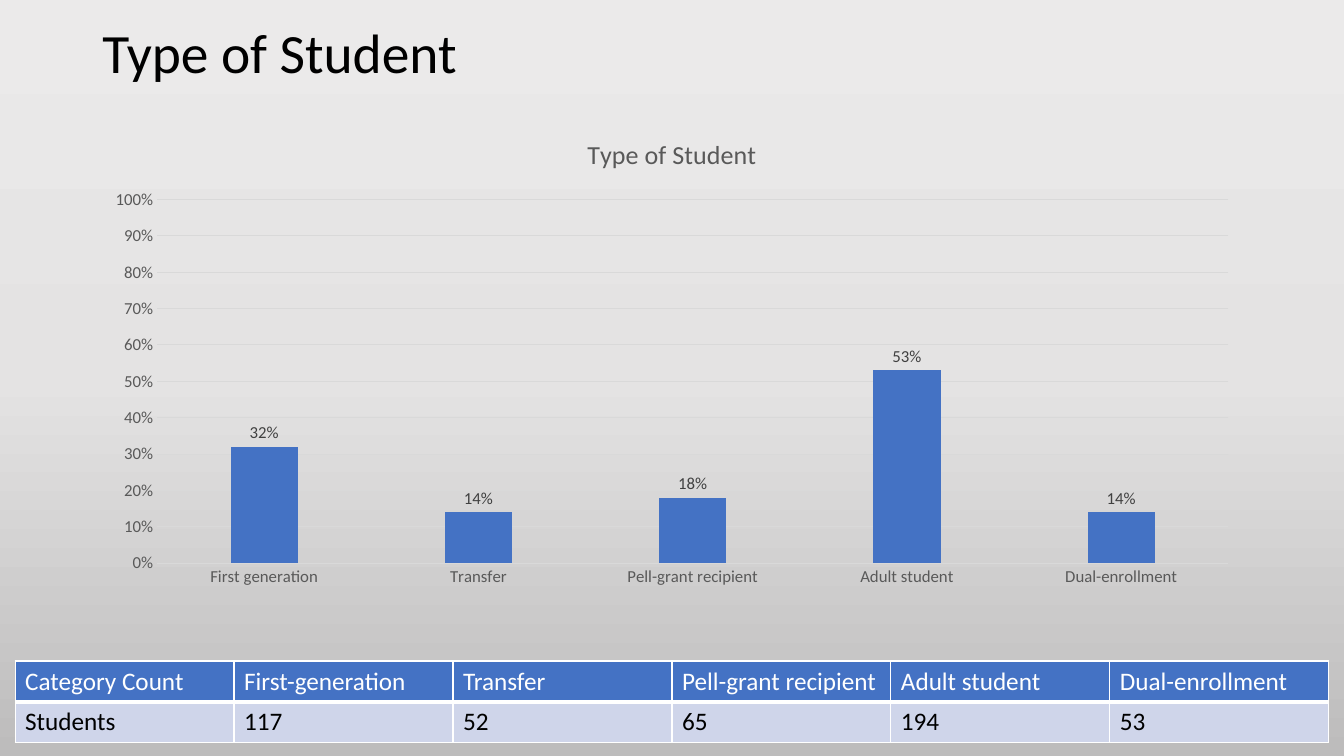
from lxml import etree
from pptx import Presentation
from pptx.chart.data import CategoryChartData
from pptx.dml.color import RGBColor
from pptx.enum.chart import XL_CHART_TYPE, XL_LABEL_POSITION, XL_TICK_MARK
from pptx.enum.text import MSO_ANCHOR
from pptx.oxml.ns import qn
from pptx.util import Pt

COLUMNS = XL_CHART_TYPE.COLUMN_CLUSTERED
OUTSIDE_END = XL_LABEL_POSITION.OUTSIDE_END
NO_TICK = XL_TICK_MARK.NONE
MIDDLE = MSO_ANCHOR.MIDDLE

FONT = "Calibri"
BLACK = RGBColor(0x00, 0x00, 0x00)
WHITE = RGBColor(0xFF, 0xFF, 0xFF)
BLUE = RGBColor(0x44, 0x72, 0xC4)
PALE_BLUE = RGBColor(0xCF, 0xD5, 0xEA)
LABEL_GRAY = RGBColor(0x40, 0x40, 0x40)
AXIS_GRAY = RGBColor(0x59, 0x59, 0x59)
GRID_GRAY = RGBColor(0xD9, 0xD9, 0xD9)
BACKGROUND_STOPS = [
    (0, RGBColor(0xEB, 0xEA, 0xEA)),
    (50, RGBColor(0xE4, 0xE3, 0xE3)),
    (100, RGBColor(0xBD, 0xBC, 0xBC)),
]

TITLE = "Type of Student"
SHARES = {
    "First generation": 0.32,
    "Transfer": 0.14,
    "Pell-grant recipient": 0.18,
    "Adult student": 0.53,
    "Dual-enrollment": 0.14,
}
COUNTS = [
    ["Category Count", "First-generation", "Transfer",
     "Pell-grant recipient", "Adult student", "Dual-enrollment"],
    ["Students", "117", "52", "65", "194", "53"],
]


def write(frame, text, size, color, spacing=None):
    paragraph = frame.paragraphs[0]
    paragraph.line_spacing = spacing
    run = paragraph.add_run()
    run.text = text
    run.font.size = Pt(size)
    run.font.name = FONT
    run.font.color.rgb = color
    run.font.bold = False


def style_font(font, size, color):
    font.size = Pt(size)
    font.name = FONT
    font.color.rgb = color


prs = Presentation()
prs.slide_width, prs.slide_height = Pt(960), Pt(540)
slide = prs.slides.add_slide(prs.slide_layouts[6])

# Background gradient, light at the top
backdrop = slide.background.fill
backdrop.gradient()
backdrop.gradient_angle = 270
stops = slide.element.find(".//" + qn("a:gsLst"))
for stop in list(stops):
    stops.remove(stop)
for position, color in BACKGROUND_STOPS:
    stop = etree.SubElement(stops, qn("a:gs"), pos=str(position * 1000))
    etree.SubElement(stop, qn("a:srgbClr"), val=str(color))

# Title
heading = slide.shapes.add_textbox(Pt(66), Pt(15.8), Pt(828), Pt(48.2)).text_frame
heading.word_wrap = True
heading.vertical_anchor = MIDDLE
write(heading, TITLE, size=39.6, color=BLACK, spacing=0.9)

# Chart
share_data = CategoryChartData(number_format="0%")
share_data.categories = list(SHARES)
share_data.add_series("Series 1", list(SHARES.values()))
chart = slide.shapes.add_chart(
    COLUMNS, Pt(66), Pt(83.5), Pt(828), Pt(342.7), share_data).chart
style_font(chart.font, 10, BLACK)
chart.has_legend = False
chart.has_title = True
write(chart.chart_title.text_frame, TITLE, size=18.6, color=AXIS_GRAY)
chart.chart_title.include_in_layout = False

for axis in (chart.category_axis, chart.value_axis):
    axis.major_tick_mark = axis.minor_tick_mark = NO_TICK
    style_font(axis.tick_labels.font, 12, AXIS_GRAY)

shares_axis = chart.value_axis
shares_axis.minimum_scale, shares_axis.maximum_scale = 0, 1
shares_axis.major_unit = 0.1
shares_axis.tick_labels.number_format = "0%"
shares_axis.tick_labels.number_format_is_linked = False
shares_axis.format.line.fill.background()
for line in (chart.category_axis.format.line, shares_axis.major_gridlines.format.line):
    line.color.rgb = GRID_GRAY
    line.width = Pt(0.75)

plot = chart.plots[0]
plot.gap_width, plot.overlap = 219, -27
plot.vary_by_categories = False
bars = plot.series[0]
bars.format.fill.solid()
bars.format.fill.fore_color.rgb = BLUE
labels = bars.data_labels
labels.show_value = True
labels.position = OUTSIDE_END
labels.number_format = "0%"
labels.number_format_is_linked = False
style_font(labels.font, 12, LABEL_GRAY)

# Table of counts
table = slide.shapes.add_table(
    len(COUNTS), len(COUNTS[0]), Pt(10.8), Pt(472.2), Pt(938.4), Pt(58.4)).table
for row_index, row in enumerate(COUNTS):
    is_header = row_index == 0
    for column_index, text in enumerate(row):
        cell = table.cell(row_index, column_index)
        write(cell.text_frame, text, size=18, color=WHITE if is_header else BLACK)
        cell.fill.solid()
        cell.fill.fore_color.rgb = BLUE if is_header else PALE_BLUE
        properties = cell._tc.get_or_add_tcPr()
        for order, side in enumerate(("lnL", "lnR", "lnT", "lnB")):
            width = 3 if is_header and side == "lnB" else 1
            border = etree.Element(qn("a:" + side), w=str(Pt(width)))
            border_fill = etree.SubElement(border, qn("a:solidFill"))
            etree.SubElement(border_fill, qn("a:srgbClr"), val=str(WHITE))
            properties.insert(order, border)

prs.save("out.pptx")
